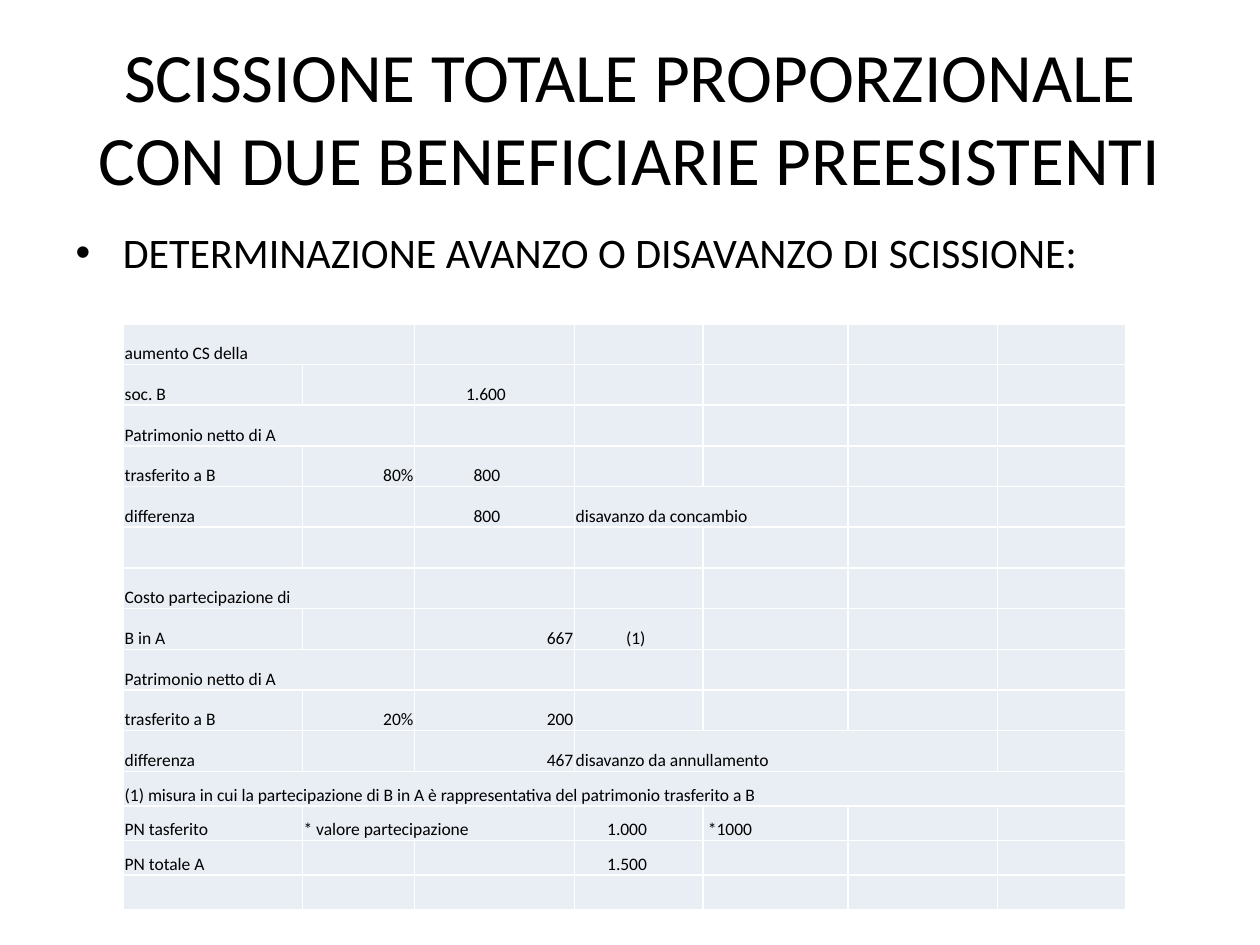
from dataclasses import dataclass

from lxml import etree
from pptx import Presentation
from pptx.dml.color import RGBColor
from pptx.enum.text import MSO_ANCHOR, MSO_AUTO_SIZE, PP_ALIGN
from pptx.oxml.ns import qn
from pptx.util import Inches, Pt

LEFT, CENTER, RIGHT = PP_ALIGN.LEFT, PP_ALIGN.CENTER, PP_ALIGN.RIGHT
TOP, MIDDLE, BOTTOM = MSO_ANCHOR.TOP, MSO_ANCHOR.MIDDLE, MSO_ANCHOR.BOTTOM
NO_FIT = MSO_AUTO_SIZE.NONE
GRID_COLUMNS, GRID_ROWS = 100, 75


@dataclass(frozen=True)
class Theme:
    """Colours, font and type sizes of the slide."""

    font: str = "Calibri"
    text: str = "000000"
    cell: str = "E9EDF4"
    border: str = "FFFFFF"
    border_width: int = 1
    title_size: float = 39.6
    body_size: int = 24
    table_size: int = 10


@dataclass(frozen=True)
class Entry:
    """Text of one table cell with its place, span, indent and alignment."""

    row: int
    column: int
    text: str
    span: int = 1
    indent: float = 0.1
    align: PP_ALIGN = LEFT


COLUMN_WIDTHS = [14.2, 8.9, 12.7, 10.2, 11.5, 11.9, 10.2]
ROW_WEIGHTS = [20] * 11 + [17] * 4
ENTRIES = [
    Entry(0, 0, "aumento CS della", span=2),
    Entry(1, 0, "soc. B"),
    Entry(1, 2, "1.600", indent=4.1),
    Entry(2, 0, "Patrimonio netto di A", span=2),
    Entry(3, 0, "trasferito a B"),
    Entry(3, 1, "80%", align=RIGHT),
    Entry(3, 2, "800", indent=4.7),
    Entry(4, 0, "differenza"),
    Entry(4, 2, "800", indent=4.7),
    Entry(4, 3, "disavanzo da concambio", span=2),
    Entry(6, 0, "Costo partecipazione di", span=2),
    Entry(7, 0, "B in A"),
    Entry(7, 2, "667", align=RIGHT),
    Entry(7, 3, "(1)", indent=4.1),
    Entry(8, 0, "Patrimonio netto di A", span=2),
    Entry(9, 0, "trasferito a B"),
    Entry(9, 1, "20%", align=RIGHT),
    Entry(9, 2, "200", align=RIGHT),
    Entry(10, 0, "differenza"),
    Entry(10, 2, "467", align=RIGHT),
    Entry(10, 3, "disavanzo da annullamento", span=3),
    Entry(11, 0, "(1) misura in cui la partecipazione di B in A è rappresentativa "
          "del patrimonio trasferito a B", span=7),
    Entry(12, 0, "PN tasferito"),
    Entry(12, 1, "* valore partecipazione", span=2),
    Entry(12, 3, "1.000", indent=2.6),
    Entry(12, 4, "*1000", indent=0.4),
    Entry(13, 0, "PN totale A"),
    Entry(13, 3, "1.500", indent=2.6),
]


def apply(target, values):
    """Set each named attribute of the target."""
    for name, value in values.items():
        setattr(target, name, value)


class SlideBuilder:
    """Holds the theme and the current slide, and adds its elements."""

    def __init__(self, presentation, theme):
        """Open a slide with title and body placeholders."""
        self.theme = theme
        self.column = presentation.slide_width / GRID_COLUMNS
        self.row = presentation.slide_height / GRID_ROWS
        self.slide = presentation.slides.add_slide(presentation.slide_layouts[1])

    def box(self, left, top, width, height):
        """Turn grid columns and rows into a position and size."""
        return {"left": int(left * self.column), "top": int(top * self.row),
                "width": int(width * self.column), "height": int(height * self.row)}

    def add_text(self, paragraph, text, size, align):
        """Add one formatted run to a paragraph."""
        paragraph.alignment = align
        run = paragraph.add_run()
        run.text = text
        apply(run.font, {"name": self.theme.font, "size": Pt(size)})
        run.font.color.rgb = RGBColor.from_string(self.theme.text)

    def placeholder(self, index, text, box, size, align, anchor):
        """Fill, move and format a template placeholder."""
        shape = self.slide.placeholders[index]
        apply(shape, self.box(*box))
        apply(shape.text_frame, {"word_wrap": True, "auto_size": NO_FIT,
                                 "vertical_anchor": anchor})
        self.add_text(shape.text_frame.paragraphs[0], text, size, align)

    def title(self, text, box):
        """Set the centred title."""
        self.placeholder(0, text, box, self.theme.title_size, CENTER, MIDDLE)

    def bullet(self, text, box):
        """Set the bulleted body text."""
        self.placeholder(1, text, box, self.theme.body_size, LEFT, TOP)

    def style_cell(self, cell):
        """Give a cell its borders, fill, margins and small empty line."""
        properties = cell._tc.get_or_add_tcPr()
        for side in ("lnL", "lnR", "lnT", "lnB"):
            line = etree.SubElement(properties, qn(f"a:{side}"),
                                    w=str(Pt(self.theme.border_width)))
            fill = etree.SubElement(line, qn("a:solidFill"))
            etree.SubElement(fill, qn("a:srgbClr"), val=self.theme.border)
        cell.fill.solid()
        cell.fill.fore_color.rgb = RGBColor.from_string(self.theme.cell)
        margin = Inches(0.01)
        apply(cell, {"margin_left": margin, "margin_right": margin, "margin_top": margin,
                     "margin_bottom": 0, "vertical_anchor": BOTTOM})
        etree.SubElement(cell.text_frame.paragraphs[0]._p, qn("a:endParaRPr"),
                         sz=str(self.theme.table_size * 100))

    def table(self, box, widths, weights, entries):
        """Add a table whose row heights follow the weights."""
        place = self.box(*box)
        table = self.slide.shapes.add_table(len(weights), len(widths), **place).table
        apply(table, {"first_row": False, "horz_banding": False})
        for column, width in zip(table.columns, widths):
            column.width = int(width * self.column)
        for row, weight in zip(table.rows, weights):
            row.height = int(place["height"] * weight / sum(weights))
        for cell in table.iter_cells():
            self.style_cell(cell)
        for entry in entries:
            cell = table.cell(entry.row, entry.column)
            if entry.span > 1:
                cell.merge(table.cell(entry.row, entry.column + entry.span - 1))
            cell.margin_left = int(entry.indent * self.column)
            self.add_text(cell.text_frame.paragraphs[0], entry.text,
                          self.theme.table_size, entry.align)


def main():
    """Build and save the slide."""
    presentation = Presentation()
    apply(presentation, {"slide_width": Inches(10), "slide_height": Inches(7.5)})
    builder = SlideBuilder(presentation, Theme())
    builder.title("SCISSIONE TOTALE PROPORZIONALE CON DUE BENEFICIARIE PREESISTENTI",
                  (5, 3, 90, 12.5))
    builder.bullet("DETERMINAZIONE AVANZO O DISAVANZO DI SCISSIONE:", (5, 17.5, 90, 49.5))
    builder.table((9.8, 25.7, 79.5, 46.5), COLUMN_WIDTHS, ROW_WEIGHTS, ENTRIES)
    presentation.save("out.pptx")


if __name__ == "__main__":
    main()
